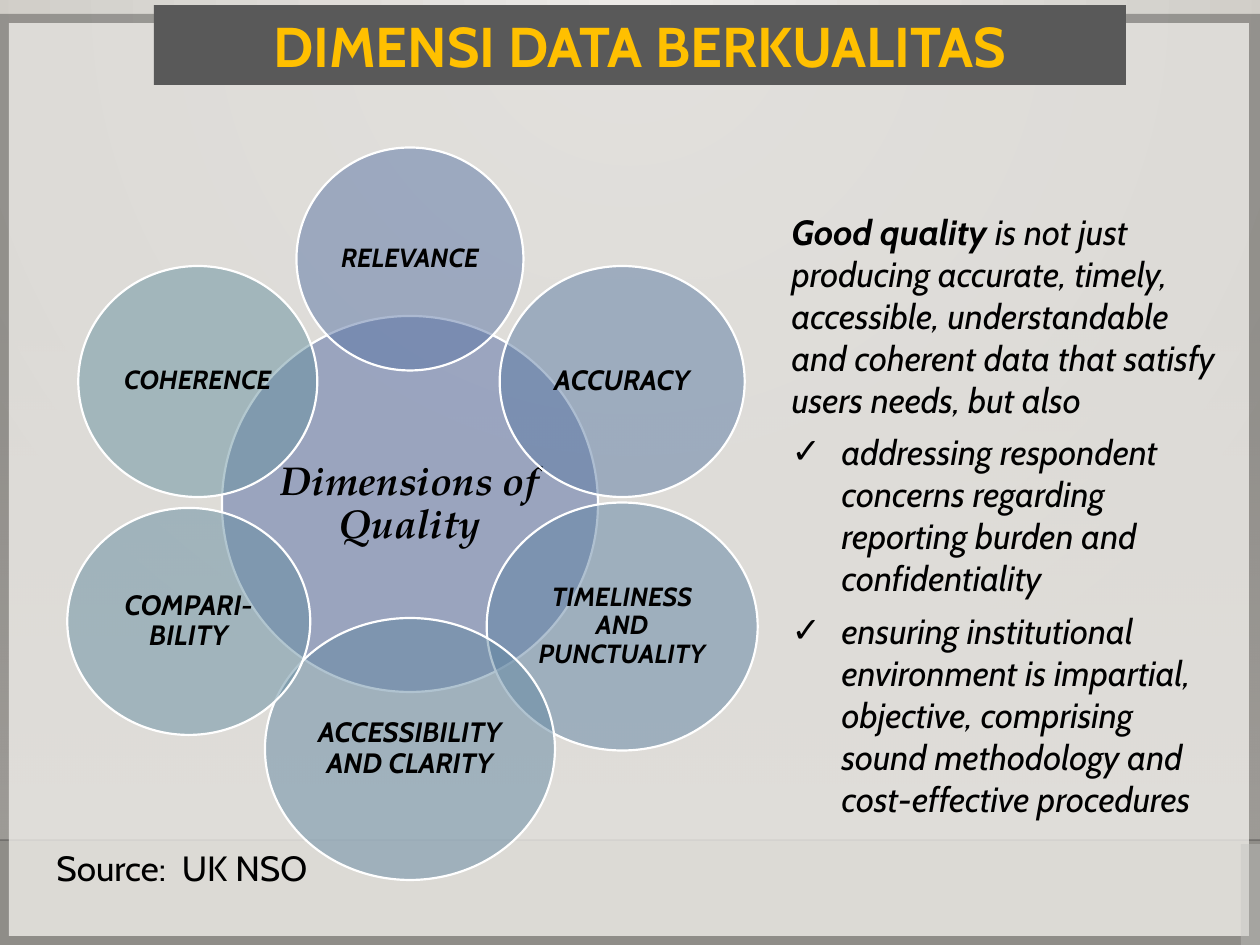
from math import cos, radians, sin

from lxml import etree
from pptx import Presentation
from pptx.dml.color import RGBColor
from pptx.enum.shapes import MSO_CONNECTOR, MSO_SHAPE
from pptx.enum.text import MSO_ANCHOR, MSO_AUTO_SIZE, PP_ALIGN
from pptx.oxml import parse_xml
from pptx.oxml.ns import qn
from pptx.util import Pt

RECT, OVAL = MSO_SHAPE.RECTANGLE, MSO_SHAPE.OVAL
STRAIGHT = MSO_CONNECTOR.STRAIGHT
CENTER, LEFT = PP_ALIGN.CENTER, PP_ALIGN.LEFT
MIDDLE, TOP = MSO_ANCHOR.MIDDLE, MSO_ANCHOR.TOP
NO_FIT = MSO_AUTO_SIZE.NONE

PX = 914400 // 126
WIDTH, HEIGHT = 1260, 945
NS = "http://schemas.openxmlformats.org/drawingml/2006/main"
BODY_FONT, HUB_FONT = "Cabin", "TeX Gyre Pagella"

TITLE = "DIMENSI DATA BERKUALITAS"
SOURCE = "Source:  UK NSO"
INTRO = [
    ("Good quality ", True),
    ("is not just producing accurate, timely, accessible, understandable "
     "and coherent data that satisfy users needs, but also", False),
]
POINTS = [
    "addressing respondent concerns regarding reporting burden and confidentiality",
    "ensuring institutional environment is impartial, objective, comprising "
    "sound methodology and cost-effective procedures",
]

HUB = ("Dimensions of Quality", 376, 376, "586EA6", 23)
HUB_CENTER = (410, 504)
ORBIT = 245
# label, width, height, colour, text size, shift from the orbit; clockwise from the top
DIMENSIONS = [
    ("RELEVANCE", 227, 223, "5A75A5", 15, (0, 0)),
    ("ACCURACY", 245, 231, "5D7CA4", 16, (0, 0)),
    ("TIMELINESS AND PUNCTUALITY", 271, 248, "6083A3", 15, (0, 0)),
    ("ACCESSIBILITY AND CLARITY", 290, 262, "6388A2", 16, (0, 0)),
    ("COMPARI-BILITY", 243, 227, "658DA1", 16, (-9, -5)),
    ("COHERENCE", 239, 231, "6892A0", 15, (0, 0)),
]


def px(*values):
    return [round(v * PX) for v in values]


def rgb(code):
    return RGBColor.from_string(code)


def set_alpha(fill_parent, percent):
    color = fill_parent.find(f".//{qn('a:srgbClr')}")
    etree.SubElement(color, qn("a:alpha"), val=str(percent * 1000))


def set_gradient(fill, parent, stops, direction):
    """Fill with (position, colour, alpha) stops and a direction element."""
    fill.gradient()
    old = parent.find(f".//{qn('a:gradFill')}")
    gs = "".join(
        f'<a:gs pos="{pos * 1000}"><a:srgbClr val="{color}">'
        f'<a:alpha val="{alpha * 1000}"/></a:srgbClr></a:gs>'
        for pos, color, alpha in stops)
    new = parse_xml(f'<a:gradFill xmlns:a="{NS}" rotWithShape="1">'
                    f"<a:gsLst>{gs}</a:gsLst>{direction}</a:gradFill>")
    old.getparent().replace(old, new)


def add_shape(slide, kind, box, color=None, alpha=100):
    sp = slide.shapes.add_shape(kind, *px(*box))
    sp.shadow.inherit = False
    sp.line.fill.background()
    if color:
        sp.fill.solid()
        sp.fill.fore_color.rgb = rgb(color)
        if alpha < 100:
            set_alpha(sp._element.spPr, alpha)
    return sp


def place(sp, box):
    sp.left, sp.top, sp.width, sp.height = px(*box)


def set_frame(sp, anchor, wrap=True):
    tf = sp.text_frame
    tf.word_wrap, tf.auto_size, tf.vertical_anchor = wrap, NO_FIT, anchor
    return tf


def add_run(p, text, size, color="000000", font=BODY_FONT, bold=False, italic=False):
    r = p.add_run()
    r.text = text
    f = r.font
    f.size, f.name, f.bold, f.italic = Pt(size), font, bold, italic
    f.color.rgb = rgb(color)


def add_backdrop(slide):
    bg = slide.background
    set_gradient(bg.fill, slide._element, [(0, "ECEAE7", 100), (100, "CAC7C1", 100)],
                 '<a:path path="circle"><a:fillToRect l="43000" r="43000" b="100000"/></a:path>')
    floor = add_shape(slide, RECT, (0, 277, WIDTH, 563))
    set_gradient(floor.fill, floor._element, [(0, "DFDBD5", 0), (100, "DFDBD5", 100)],
                 '<a:lin ang="5400000" scaled="0"/>')
    horizon = slide.shapes.add_connector(STRAIGHT, *px(0, 840, WIDTH, 840))
    horizon.line.color.rgb = rgb("000001")
    horizon.line.width = Pt(1)
    set_alpha(horizon._element.spPr, 20)
    etree.SubElement(horizon._element.spPr, qn("a:effectLst"))

    panel = add_shape(slide, RECT, (9, 23, 1240, 913), "F6F4F0", 75)
    effects = panel._element.spPr.find(qn("a:effectLst"))
    shadow = etree.SubElement(effects, qn("a:outerShdw"), blurRad="0", dist="0",
                              sx="102000", sy="102000", algn="ctr", rotWithShape="0")
    etree.SubElement(shadow, qn("a:srgbClr"), val="000000")
    set_alpha(shadow, 39)
    add_shape(slide, RECT, (1241, 844, 20, 106), "C3C3C1", 43)


def fill_title(title):
    place(title, (154, 5, 972, 80))
    title.fill.solid()
    title.fill.fore_color.rgb = rgb("595959")
    p = set_frame(title, MIDDLE).paragraphs[0]
    p.alignment = CENTER
    add_run(p, TITLE, 32, "FFC000", bold=True)


def format_item(p, indent, bullet=None):
    p.alignment = LEFT
    p.space_before, p.space_after = Pt(0), Pt(6)
    pPr = p._p.get_or_add_pPr()
    pPr.set("marL", str(indent * PX))
    pPr.set("indent", str(-indent * PX))
    if bullet:
        etree.SubElement(pPr, qn("a:buChar"), char=bullet)
    else:
        etree.SubElement(pPr, qn("a:buNone"))


def fill_body(body):
    place(body, (779, 204, 456, 627))
    tf = set_frame(body, TOP)
    p = tf.paragraphs[0]
    format_item(p, 0)
    for text, bold in INTRO:
        add_run(p, text, 20, bold=bold, italic=True)
    for text in POINTS:
        p = tf.add_paragraph()
        format_item(p, 50, "✓")
        add_run(p, text, 20, italic=True)


def add_circle(slide, center, label, width, height, color, size, font=BODY_FONT):
    box = (center[0] - width / 2, center[1] - height / 2, width, height)
    sp = add_shape(slide, OVAL, box, color, 50)
    sp.line.color.rgb = rgb("FFFFFF")
    sp.line.width = Pt(1.25)
    tf = set_frame(sp, MIDDLE)
    tf.margin_left = tf.margin_right = tf.margin_top = tf.margin_bottom = 3 * PX
    p = tf.paragraphs[0]
    p.alignment, p.line_spacing = CENTER, 0.9
    add_run(p, label, size, font=font, bold=True, italic=True)


def add_dimensions(slide):
    add_circle(slide, HUB_CENTER, *HUB, font=HUB_FONT)
    for i, (*circle, (dx, dy)) in enumerate(DIMENSIONS):
        angle = radians(360 * i / len(DIMENSIONS))
        center = (HUB_CENTER[0] + ORBIT * sin(angle) + dx,
                  HUB_CENTER[1] - ORBIT * cos(angle) + dy)
        add_circle(slide, center, *circle)


def main():
    prs = Presentation()
    prs.slide_width, prs.slide_height = px(WIDTH, HEIGHT)
    slide = prs.slides.add_slide(prs.slide_layouts[1])
    title, body = slide.placeholders
    add_backdrop(slide)
    for sp in (title, body):  # bring the text in front of the backdrop
        slide.shapes._spTree.append(sp._element)
    fill_title(title)
    fill_body(body)
    source = slide.shapes.add_textbox(*px(44, 840, 278, 55))
    add_run(set_frame(source, TOP, wrap=False).paragraphs[0], SOURCE, 20)
    add_dimensions(slide)
    prs.save("out.pptx")


if __name__ == "__main__":
    main()
